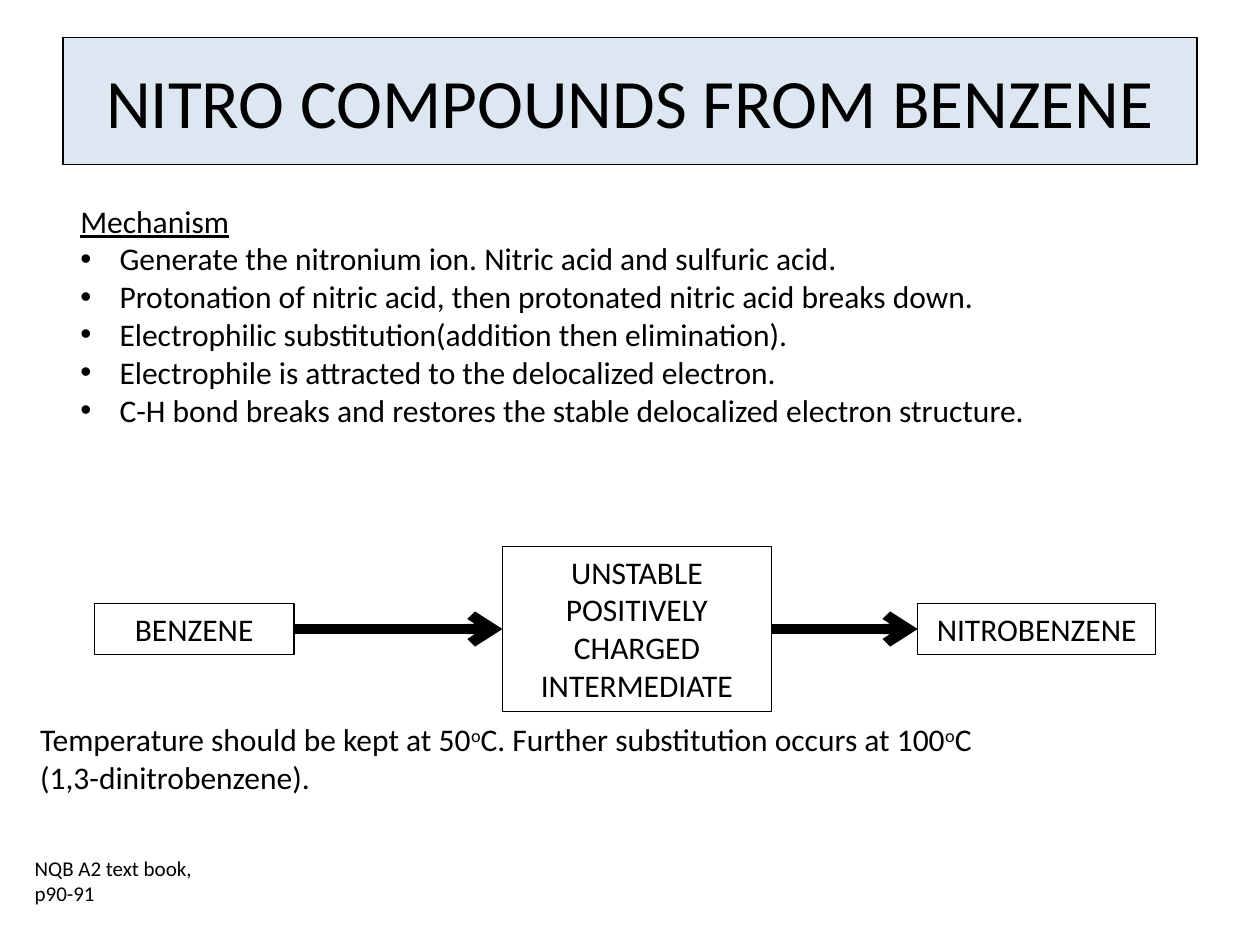
from pptx import Presentation
from pptx.dml.color import RGBColor
from pptx.enum.shapes import MSO_CONNECTOR, MSO_SHAPE
from pptx.enum.text import MSO_ANCHOR, PP_ALIGN
from pptx.oxml.ns import qn
from pptx.util import Cm, Pt
from lxml import etree

CENTER, LEFT = PP_ALIGN.CENTER, PP_ALIGN.LEFT
MIDDLE, TOP = MSO_ANCHOR.MIDDLE, MSO_ANCHOR.TOP
RECT, STRAIGHT = MSO_SHAPE.RECTANGLE, MSO_CONNECTOR.STRAIGHT
SIDE_LEFT, SIDE_RIGHT = 1, 3

THEME = {
    "font": "Calibri",
    "ink": RGBColor(0, 0, 0),
    "title_fill": RGBColor(0x4F, 0x81, 0xBD),
    "title_alpha": 19000,
    "title": 39.6, "body": 18, "source": 12,
    "border": 0.75, "arrow": 5.75,
}

# Content
TITLE = "NITRO COMPOUNDS FROM BENZENE"
HEADING = "Mechanism"
STEPS = [
    "Generate the nitronium ion. Nitric acid and sulfuric acid.",
    "Protonation of nitric acid, then protonated nitric acid breaks down.",
    "Electrophilic substitution(addition then elimination).",
    "Electrophile is attracted to the delocalized electron.",
    "C-H bond breaks and restores the stable delocalized electron structure.",
]
# Reaction stages: text, left, width, height (cm)
STAGES = [
    ("BENZENE", 1.9, 4.03, 1.03),
    ("UNSTABLE POSITIVELY CHARGED INTERMEDIATE", 10.13, 5.42, 3.33),
    ("NITROBENZENE", 18.5, 4.8, 1.03),
]
STAGE_MIDDLE = 12.68
# Runs: text, superscript
CONDITIONS = [
    [("Temperature should be kept at 50", False), ("o", True),
     ("C. Further substitution occurs at 100", False), ("o", True), ("C", False)],
    [("(1,3-dinitrobenzene).", False)],
]
SOURCE = "NQB A2 text book, p90-91"


def add_run(p, text, size, underline=None, superscript=False):
    r = p.add_run()
    r.text = text
    r.font.name = THEME["font"]
    r.font.size = Pt(size)
    r.font.color.rgb = THEME["ink"]
    r.font.underline = underline
    if superscript:
        r.font._element.set("baseline", "30000")


def add_bullet(p, indent):
    pPr = p._p.get_or_add_pPr()
    pPr.set("marL", str(indent))
    pPr.set("indent", str(-indent))
    etree.SubElement(pPr, qn("a:buFont")).set("typeface", "Arial")
    etree.SubElement(pPr, qn("a:buChar")).set("char", "•")


def add_text(s, left, top, width, height):
    tf = s.shapes.add_textbox(Cm(left), Cm(top), Cm(width), Cm(height)).text_frame
    tf.word_wrap = True
    tf.vertical_anchor = TOP
    tf.paragraphs[0].alignment = LEFT
    return tf


def set_border(sp):
    sp.line.color.rgb = THEME["ink"]
    sp.line.width = Pt(THEME["border"])


def add_stage(s, text, left, width, height):
    sp = s.shapes.add_shape(RECT, Cm(left), Cm(STAGE_MIDDLE - height / 2),
                            Cm(width), Cm(height))
    sp.shadow.inherit = False
    sp.fill.background()
    set_border(sp)
    tf = sp.text_frame
    tf.word_wrap = True
    tf.vertical_anchor = TOP
    p = tf.paragraphs[0]
    p.alignment = CENTER
    add_run(p, text, THEME["body"])
    return sp


def add_arrow(s, start, end):
    y = Cm(STAGE_MIDDLE)
    cx = s.shapes.add_connector(STRAIGHT, start.left + start.width, y, end.left, y)
    cx.begin_connect(start, SIDE_RIGHT)
    cx.end_connect(end, SIDE_LEFT)
    cx.line.color.rgb = THEME["ink"]
    cx.line.width = Pt(THEME["arrow"])
    etree.SubElement(cx.line._get_or_add_ln(), qn("a:tailEnd")).set("type", "arrow")
    etree.SubElement(cx._element.spPr, qn("a:effectLst"))


def main():
    prs = Presentation()
    prs.slide_width, prs.slide_height = Cm(25.4), Cm(19.05)
    s = prs.slides.add_slide(prs.slide_layouts[5])

    # Title
    title = s.shapes.title
    title.left, title.top, title.width, title.height = Cm(1.27), Cm(0.76), Cm(22.86), Cm(2.56)
    title.fill.solid()
    title.fill.fore_color.rgb = THEME["title_fill"]
    color = title._element.spPr.find(".//" + qn("a:srgbClr"))
    etree.SubElement(color, qn("a:alpha")).set("val", str(THEME["title_alpha"]))
    set_border(title)
    tf = title.text_frame
    tf.vertical_anchor = MIDDLE
    p = tf.paragraphs[0]
    p.alignment = CENTER
    add_run(p, TITLE, THEME["title"])

    # Mechanism steps
    tf = add_text(s, 1.37, 3.94, 22.94, 4.88)
    add_run(tf.paragraphs[0], HEADING, THEME["body"], underline=True)
    for step in STEPS:
        p = tf.add_paragraph()
        add_bullet(p, Cm(0.79))
        add_run(p, step, THEME["body"])

    # Reaction flow
    boxes = [add_stage(s, *stage) for stage in STAGES]
    for start, end in zip(boxes, boxes[1:]):
        add_arrow(s, start, end)

    # Reaction conditions
    tf = add_text(s, 0.56, 14.4, 24.33, 1.8)
    for i, runs in enumerate(CONDITIONS):
        p = tf.add_paragraph() if i else tf.paragraphs[0]
        for text, superscript in runs:
            add_run(p, text, THEME["body"], superscript=superscript)

    # Source
    tf = add_text(s, 0.45, 17.12, 4.04, 1.27)
    add_run(tf.paragraphs[0], SOURCE, THEME["source"])

    prs.save("out.pptx")


if __name__ == "__main__":
    main()
